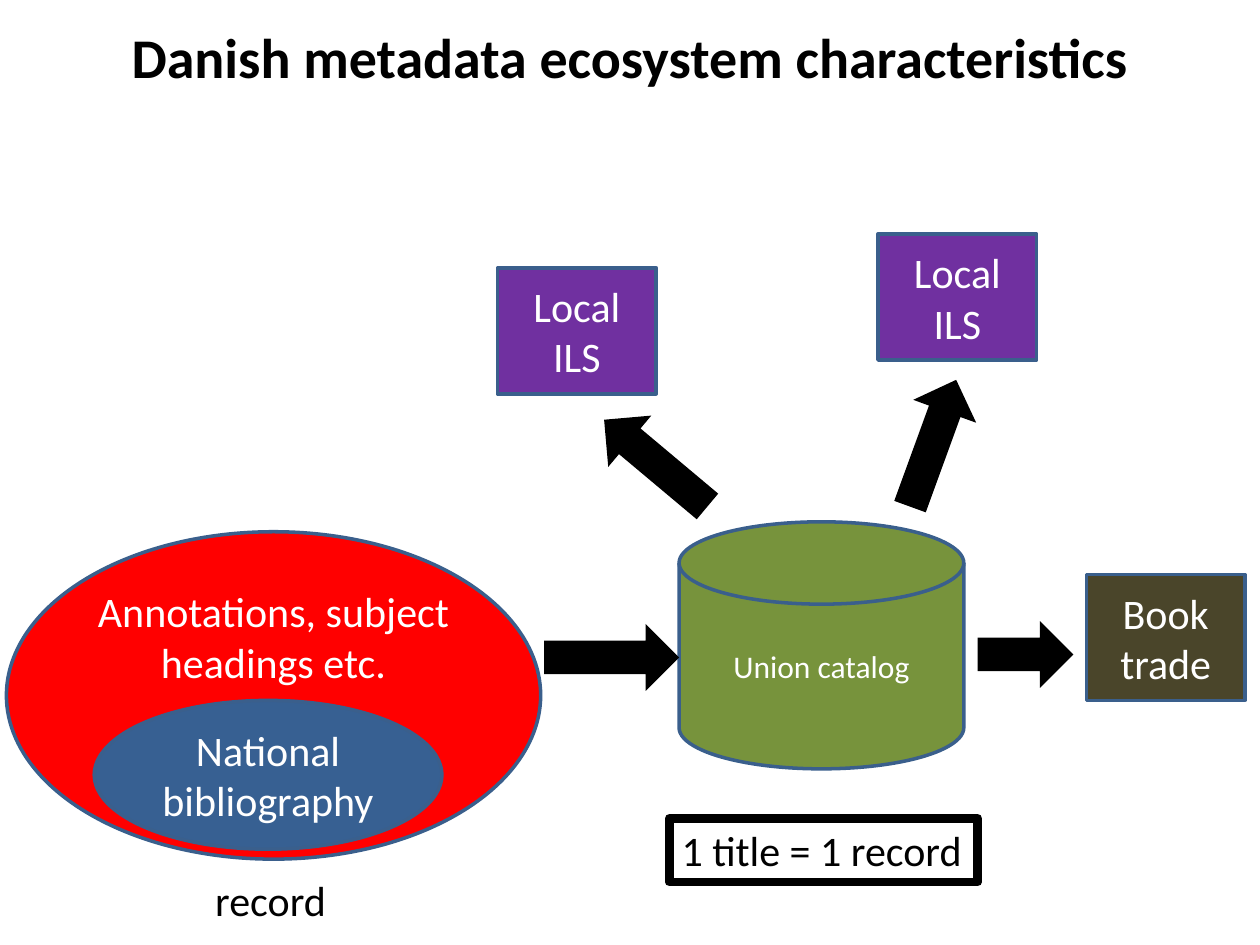
from pptx import Presentation, util as u
from pptx.dml.color import RGBColor
from pptx.enum import shapes, text

KIND = shapes.MSO_SHAPE
MID, TOP = text.MSO_ANCHOR.MIDDLE, text.MSO_ANCHOR.TOP
MAIN, EDGE, DARK, PALE = "Calibri", "3A5F8C", "000000", "FFFFFF"
BOX, BOLT = (3.2, 2.54), (2.72, 1.35)

TITLE = "Danish metadata ecosystem characteristics"
NODES = [
    ("Annotations, subject headings etc.", KIND.OVAL, (0.13, 10.72), (10.77, 6.6), "FF0000", 24, TOP),
    ("National bibliography", KIND.OVAL, (1.9, 14.12), (7.01, 3.0), "376092", 24, MID),
    ("Union catalog", KIND.FLOWCHART_MAGNETIC_DISK, (13.69, 10.52), (5.74, 4.98), "77933C", 18, MID),
    ("Local ILS", KIND.RECTANGLE, (10.03, 5.4), BOX, "7030A0", 24, MID),
    ("Local ILS", KIND.RECTANGLE, (17.7, 4.72), BOX, "7030A0", 24, MID),
    ("Book trade", KIND.RECTANGLE, (21.9, 11.58), BOX, "4A452A", 24, MID),
]
ARROWS = [
    ((10.97, 12.58), BOLT, 0),
    ((11.86, 8.66), BOLT, 220),
    ((17.45, 8.26), BOLT, 290),
    ((19.71, 12.52), (1.93, 1.35), 0),
]
NOTES = [
    ("1 title = 1 record", (13.49, 16.5), (6.22, 1.28), 5),
    ("record", (4.09, 17.5), (2.77, 1.28), 0),
]


def tint(code):
    return RGBColor.from_string(code)


def place(at, size):
    return [u.Cm(n) for n in at + size]


def write(shape, words, size, color, anchor=TOP, wrap=True, bold=False,
          align=text.PP_ALIGN.CENTER):
    frame = shape.text_frame
    frame.text = words
    for key, val in {"word_wrap": wrap, "vertical_anchor": anchor,
                     "auto_size": text.MSO_AUTO_SIZE.NONE}.items():
        setattr(frame, key, val)
    para = frame.paragraphs[0]
    para.alignment = align
    font = para.runs[0].font
    for key, val in {"name": MAIN, "size": u.Pt(size), "bold": bold}.items():
        setattr(font, key, val)
    font.color.rgb = tint(color)


def draw(slide, kind, at, size, fill, edge=None):
    shape = slide.shapes.add_shape(kind, *place(at, size))
    shape.shadow.inherit = False
    shape.fill.solid()
    shape.fill.fore_color.rgb = tint(fill)
    if edge:
        shape.line.color.rgb = tint(edge)
        shape.line.width = u.Pt(2)
    else:
        shape.line.fill.background()
    return shape


def main():
    """Build the metadata ecosystem slide."""
    deck = Presentation()
    deck.slide_width, deck.slide_height = u.Cm(25.4), u.Cm(19.05)
    slide = deck.slides.add_slide(deck.slide_layouts[5])
    head = slide.shapes.title
    spot = place((2.31, 0.33), (20.78, 1.63))
    for key, val in zip(("left", "top", "width", "height"), spot):
        setattr(head, key, val)
    write(head, TITLE, 32, DARK, wrap=False, bold=True)

    for words, kind, at, size, fill, points, anchor in NODES:
        write(draw(slide, kind, at, size, fill, EDGE), words, points, PALE, anchor)
    for at, size, turn in ARROWS:
        draw(slide, KIND.RIGHT_ARROW, at, size, DARK).rotation = turn
    for words, at, size, width in NOTES:
        note = slide.shapes.add_textbox(*place(at, size))
        write(note, words, 24, DARK, wrap=False, align=text.PP_ALIGN.LEFT)
        if width:
            note.line.color.rgb = tint(DARK)
            note.line.width = u.Pt(width)
    deck.save("out.pptx")


if __name__ == "__main__":
    main()
